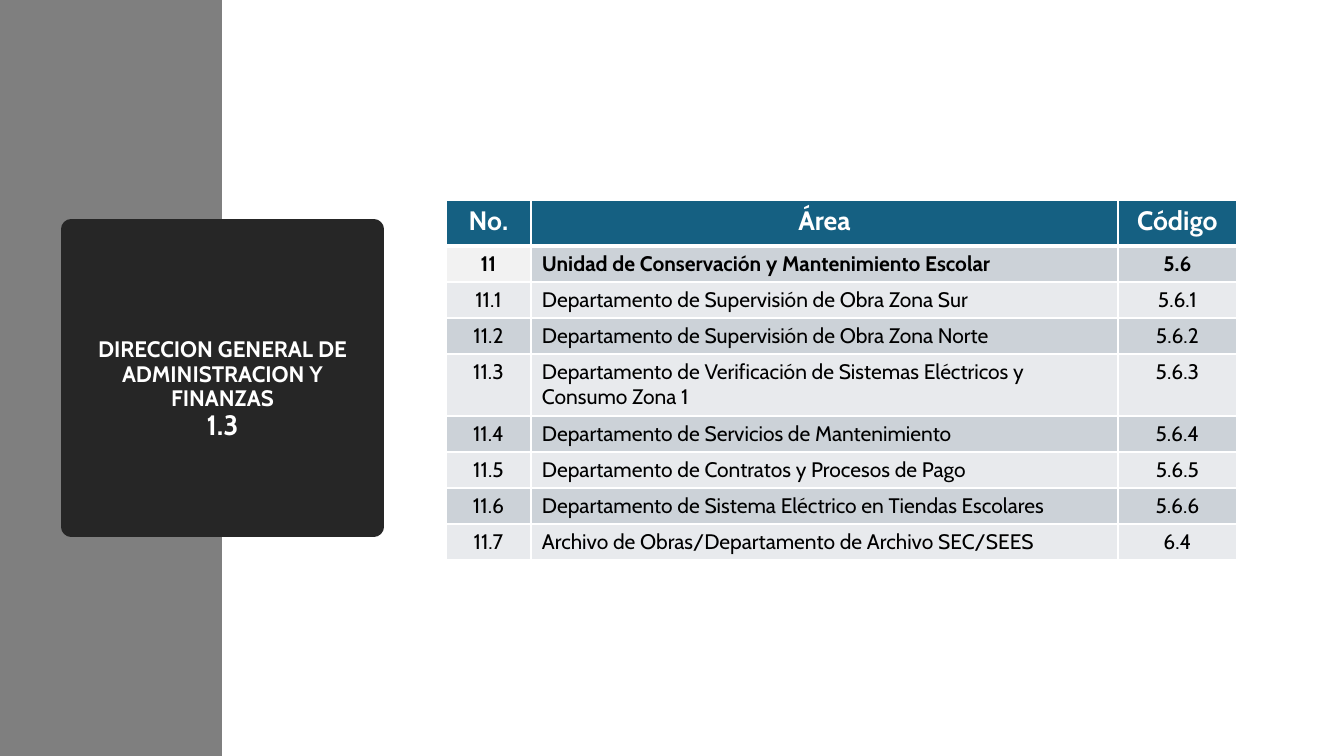
import pptx
import pptx.util
import pptx.dml.color
import pptx.enum.shapes
import pptx.enum.text
import pptx.oxml

TITLE = [("DIRECCION GENERAL DE ADMINISTRACION Y FINANZAS", 16), ("1.3", 20)]
ROWS = [
    ("No.", "Área", "Código"),
    ("11", "Unidad de Conservación y Mantenimiento Escolar", "5.6"),
    ("11.1", "Departamento de Supervisión de Obra Zona Sur", "5.6.1"),
    ("11.2", "Departamento de Supervisión de Obra Zona Norte", "5.6.2"),
    ("11.3", "Departamento de Verificación de Sistemas Eléctricos y Consumo Zona 1", "5.6.3"),
    ("11.4", "Departamento de Servicios de Mantenimiento", "5.6.4"),
    ("11.5", "Departamento de Contratos y Procesos de Pago", "5.6.5"),
    ("11.6", "Departamento de Sistema Eléctrico en Tiendas Escolares", "5.6.6"),
    ("11.7", "Archivo de Obras/Departamento de Archivo SEC/SEES", "6.4"),
]
WIDTHS = (85, 587, 119)
HEAD, LINE, TALL = 46, 36, 62
TALL_ROW = 4
FONT = "Cabin"
WHITE, BLACK, DARK = "FFFFFF", "000000", "262626"
BLUE, PALE, BANDS = "156082", "F2F2F2", ("E8EAED", "CCD2D8")
NS = 'xmlns:a="http://schemas.openxmlformats.org/drawingml/2006/main"'
MID = pptx.enum.text.PP_ALIGN.CENTER
LEFT = pptx.enum.text.PP_ALIGN.LEFT


def px(n):
    return pptx.util.Emu(round(n * 12192000 / 1344))


def tint(fmt, code):
    fmt.rgb = pptx.dml.color.RGBColor.from_string(code)


def paint(item, code):
    item.fill.solid()
    tint(item.fill.fore_color, code)


def write(para, text, size, code, bold):
    run = para.add_run()
    run.text = text
    run.font.name = FONT
    run.font.size = pptx.util.Pt(size)
    run.font.bold = bold
    tint(run.font.color, code)


def block(slide, box, code):
    kind = pptx.enum.shapes.MSO_SHAPE.RECTANGLE
    shape = slide.shapes.add_shape(kind, *map(px, box))
    shape.shadow.inherit = False
    paint(shape, code)
    shape.line.fill.background()
    return shape


def edge(cell, base):
    sides = (("L", 1), ("R", 1), ("T", 1), ("B", base))
    for spot, (side, wide) in enumerate(sides):
        line = pptx.oxml.parse_xml(
            f'<a:ln{side} {NS} w="{wide * 12700}"><a:solidFill>'
            f'<a:srgbClr val="{WHITE}"/></a:solidFill></a:ln{side}>')
        cell._tc.get_or_add_tcPr().insert(spot, line)


def add_title(slide):
    card = block(slide, (71, 229, 303, 298), DARK)
    card.line.width = pptx.util.Pt(13.75)
    card.line.fill.solid()
    tint(card.line.fill.fore_color, DARK)
    card.line._get_or_add_ln().append(pptx.oxml.parse_xml(f"<a:round {NS}/>"))
    frame = card.text_frame
    frame.word_wrap = True
    frame.vertical_anchor = pptx.enum.text.MSO_ANCHOR.MIDDLE
    frame.margin_left = frame.margin_right = px(10)
    frame.margin_top, frame.margin_bottom = px(29), px(5)
    para = frame.paragraphs[0]
    para.alignment = MID
    para.line_spacing = 0.9
    for spot, (text, size) in enumerate(TITLE):
        if spot:
            para.add_line_break()
        write(para, text, size, WHITE, True)


def add_grid(slide):
    highs = [HEAD] + [LINE] * (len(ROWS) - 1)
    highs[TALL_ROW] = TALL
    box = (446, 200, sum(WIDTHS), sum(highs))
    grid = slide.shapes.add_table(len(ROWS), len(WIDTHS), *map(px, box)).table
    for col, wide in zip(grid.columns, WIDTHS):
        col.width = px(wide)
    for r, (row, high) in enumerate(zip(ROWS, highs)):
        grid.rows[r].height = px(high)
        head = r == 0
        for c, text in enumerate(row):
            cell = grid.cell(r, c)
            fill = BLUE if head else PALE if (r, c) == (1, 0) else BANDS[r % 2]
            paint(cell, fill)
            edge(cell, 3 if head else 1)
            cell.margin_left = cell.margin_right = px(11)
            cell.margin_top = cell.margin_bottom = px(5)
            para = cell.text_frame.paragraphs[0]
            para.alignment = LEFT if c == 1 and not head else MID
            write(para, text, 19 if head else 15, WHITE if head else BLACK, r < 2)


def main():
    deck = pptx.Presentation()
    deck.slide_width, deck.slide_height = px(1344), px(756)
    slide = deck.slides.add_slide(deck.slide_layouts[6])
    block(slide, (0, 0, 222, 756), "7F7F7F")
    add_title(slide)
    add_grid(slide)
    deck.save("out.pptx")


if __name__ == "__main__":
    main()
